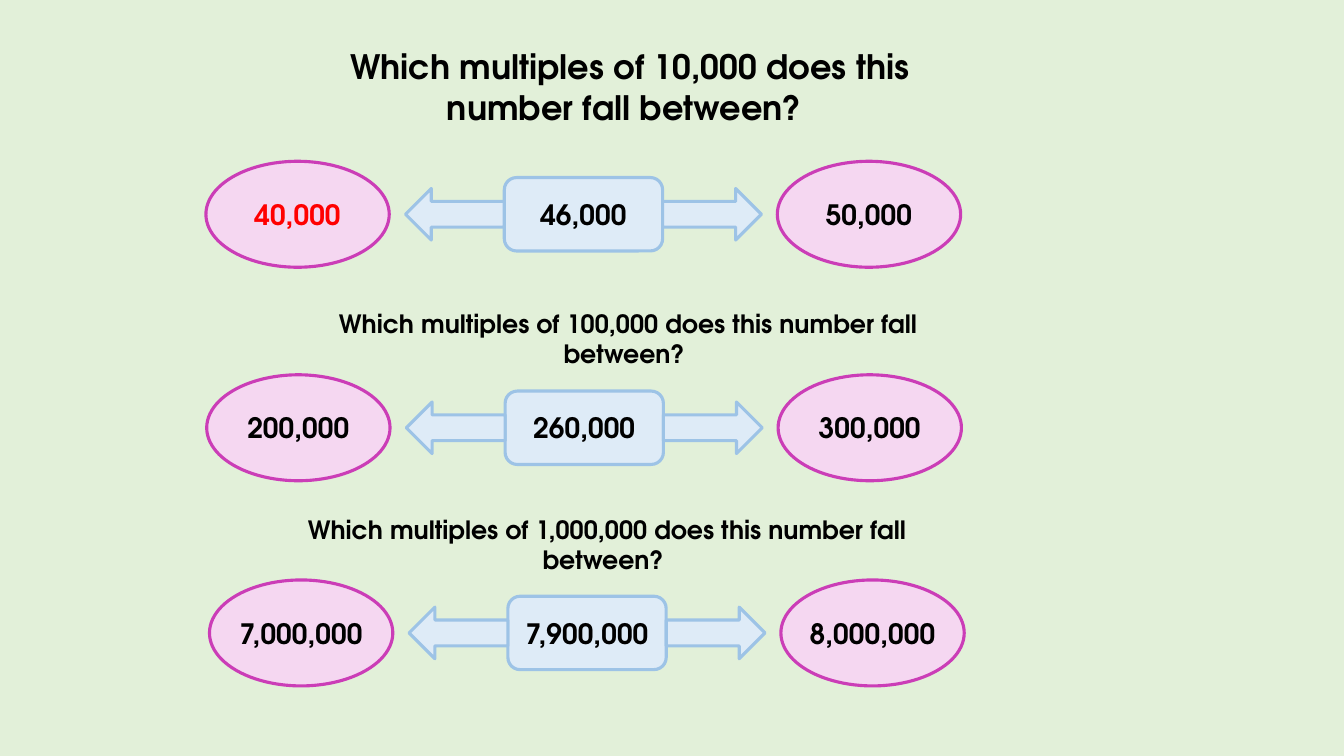
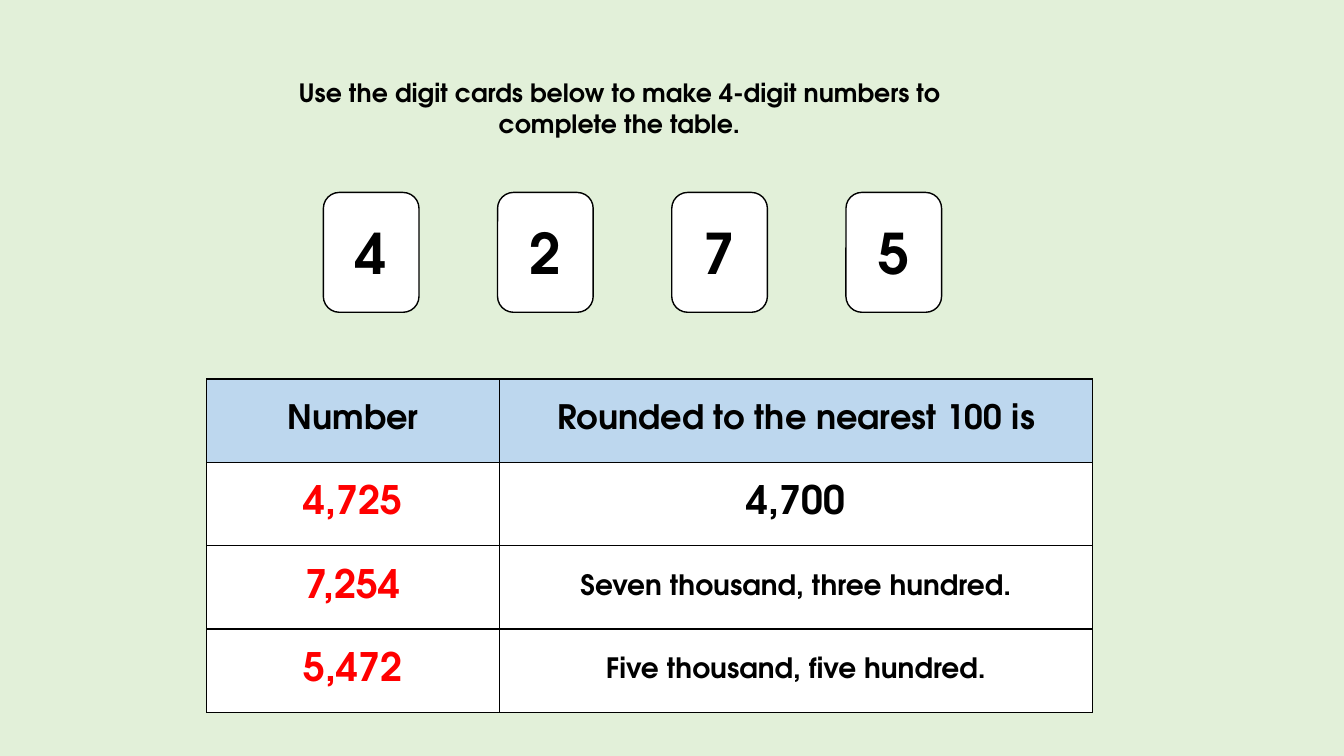
"""Build a two-slide lesson on rounding numbers."""
import dataclasses

import pptx
import pptx.dml.color
import pptx.enum.shapes
import pptx.enum.text
import pptx.oxml
import pptx.oxml.ns
import pptx.util

Cm = pptx.util.Cm
Pt = pptx.util.Pt
SHAPE = pptx.enum.shapes.MSO_SHAPE
ANCHOR = pptx.enum.text.MSO_ANCHOR


@dataclasses.dataclass(frozen=True)
class Theme:
    """Colours, font and type sizes of the lesson."""
    font: str = "TeX Gyre Adventor"
    background: str = "E2F0D9"
    ink: str = "000000"
    answer: str = "FF0000"
    paper: str = "FFFFFF"
    header: str = "BDD7EE"
    number_fill: str = "DEEBF7"
    number_line: str = "9DC3E6"
    multiple_fill: str = "F5D7F1"
    multiple_line: str = "CB3DB7"
    heading: int = 24
    question: int = 18
    label: int = 20
    value: int = 28
    digit: int = 40
    outline: float = 2.25
    thin: float = 1


def rgb(colour):
    return pptx.dml.color.RGBColor.from_string(colour)


class Lesson:
    """Hold the deck, its theme and the current page."""

    def __init__(self, theme):
        self.theme = theme
        self.deck = pptx.Presentation()
        self.deck.slide_width = Cm(33.87)
        self.deck.slide_height = Cm(19.05)
        fill = self.deck.slide_master.background.fill
        fill.solid()
        fill.fore_color.rgb = rgb(theme.background)
        self.page = None

    def add_page(self):
        self.page = self.deck.slides.add_slide(self.deck.slide_layouts[5])

    def add_span(self, frame, text, size, colour=None, indent=0):
        para = frame.paragraphs[0]
        para.alignment = pptx.enum.text.PP_ALIGN.CENTER
        if indent:
            para._p.get_or_add_pPr().set("indent", str(Cm(indent)))
        span = para.add_run()
        span.text = text
        span.font.name = self.theme.font
        span.font.size = Pt(size)
        span.font.bold = True
        span.font.color.rgb = rgb(colour or self.theme.ink)

    def place_text(self, box, left, top, text, size, indent):
        box.left, box.top = Cm(left), Cm(top)
        box.width, box.height = Cm(16.94), Cm(2.2)
        frame = box.text_frame
        frame.word_wrap = True
        frame.auto_size = pptx.enum.text.MSO_AUTO_SIZE.NONE
        frame.vertical_anchor = ANCHOR.TOP
        self.add_span(frame, text, size, indent=indent)

    def title(self, left, top, text, size, indent=0):
        self.place_text(self.page.shapes.title, left, top, text, size, indent)

    def question(self, left, top, text, indent=0):
        box = self.page.shapes.add_textbox(0, 0, 0, 0)
        self.place_text(box, left, top, text, self.theme.question, indent)

    def shape(self, kind, left, middle, width, height, fill, line, weight):
        box = self.page.shapes.add_shape(
            kind, Cm(left), Cm(middle - height / 2), Cm(width), Cm(height))
        box.shadow.inherit = False
        box.fill.solid()
        box.fill.fore_color.rgb = rgb(fill)
        box.line.color.rgb = rgb(line)
        box.line.width = Pt(weight)
        return box

    def label(self, box, text, size, colour=None):
        frame = box.text_frame
        frame.margin_left = frame.margin_right = 0
        frame.margin_top = frame.margin_bottom = 0
        frame.vertical_anchor = ANCHOR.MIDDLE
        self.add_span(frame, text, size, colour)

    def multiple(self, left, middle, text, colour):
        theme = self.theme
        box = self.shape(SHAPE.OVAL, left, middle, 4.62, 2.67,
                         theme.multiple_fill, theme.multiple_line, theme.outline)
        self.label(box, text, theme.label, colour)

    def number_line(self, left, middle, lower, number, upper, lower_colour):
        theme = self.theme
        style = theme.number_fill, theme.number_line, theme.outline
        box = self.shape(SHAPE.ROUNDED_RECTANGLE, left + 7.52, middle,
                         3.99, 1.85, *style)
        self.label(box, number, theme.label)
        for kind, offset in ((SHAPE.LEFT_ARROW, 5.03), (SHAPE.RIGHT_ARROW, 11.51)):
            self.shape(kind, left + offset, middle, 2.49, 1.3, *style)
        self.multiple(left, middle, lower, lower_colour)
        self.multiple(left + 14.4, middle, upper, theme.ink)

    def digit_card(self, left, middle, digit):
        theme = self.theme
        box = self.shape(SHAPE.ROUNDED_RECTANGLE, left, middle, 2.41, 3.02,
                         theme.paper, theme.ink, theme.thin)
        self.label(box, digit, theme.digit)

    def border(self, cell):
        properties = cell._tc.get_or_add_tcPr()
        for position, side in enumerate(("lnL", "lnR", "lnT", "lnB")):
            properties.insert(position, pptx.oxml.parse_xml(
                f'<a:{side} {pptx.oxml.ns.nsdecls("a")} w="{Pt(self.theme.thin)}">'
                f'<a:solidFill><a:srgbClr val="{self.theme.ink}"/></a:solidFill>'
                f'</a:{side}>'))

    def table(self, left, top, widths, row_height, rows):
        grid = self.page.shapes.add_table(
            len(rows), len(widths), Cm(left), Cm(top),
            Cm(sum(widths)), Cm(row_height * len(rows))).table
        grid.first_row = grid.horz_banding = False
        for column, width in zip(grid.columns, widths):
            column.width = Cm(width)
        for index, row in enumerate(rows):
            grid.rows[index].height = Cm(row_height)
            for cell, (text, size, colour) in zip(grid.rows[index].cells, row):
                cell.margin_left = cell.margin_right = 0
                cell.margin_top = cell.margin_bottom = 0
                cell.vertical_anchor = ANCHOR.MIDDLE
                cell.fill.solid()
                cell.fill.fore_color.rgb = rgb(
                    self.theme.paper if index else self.theme.header)
                self.border(cell)
                self.add_span(cell.text_frame, text, size, colour)


def add_multiples_page(lesson):
    theme = lesson.theme
    lesson.add_page()
    wording = "Which multiples of {} does this number fall between?"
    lesson.title(7.26, 1.04, wording.format("10,000"), theme.heading, 0.28)
    lesson.question(7.26, 7.65, wording.format("100,000"), 0.2)
    lesson.question(6.73, 12.83, wording.format("1,000,000"), 0.2)
    for row in (
        (5.19, 5.4, "40,000", "46,000", "50,000", theme.answer),
        (5.21, 10.78, "200,000", "260,000", "300,000", theme.ink),
        (5.28, 15.95, "7,000,000", "7,900,000", "8,000,000", theme.ink),
    ):
        lesson.number_line(*row)


def add_digit_cards_page(lesson):
    theme = lesson.theme
    lesson.add_page()
    lesson.title(
        7.14, 1.83,
        "Use the digit cards below to make 4-digit numbers to complete the table.",
        theme.question)
    for index, digit in enumerate("4275"):
        lesson.digit_card(8.15 + 4.39 * index, 6.36, digit)
    rows = [[(text, theme.heading, theme.ink)
             for text in ("Number", "Rounded to the nearest 100 is")]]
    for number, rounded, size in (
        ("4,725", "4,700", theme.value),
        ("7,254", "Seven thousand, three hundred.", theme.label),
        ("5,472", "Five thousand, five hundred.", theme.label),
    ):
        rows.append([(number, theme.value, theme.answer),
                     (rounded, size, theme.ink)])
    lesson.table(5.21, 9.55, (7.37, 14.96), 2.1, rows)


def main():
    lesson = Lesson(Theme())
    add_multiples_page(lesson)
    add_digit_cards_page(lesson)
    lesson.deck.save("out.pptx")


if __name__ == "__main__":
    main()
